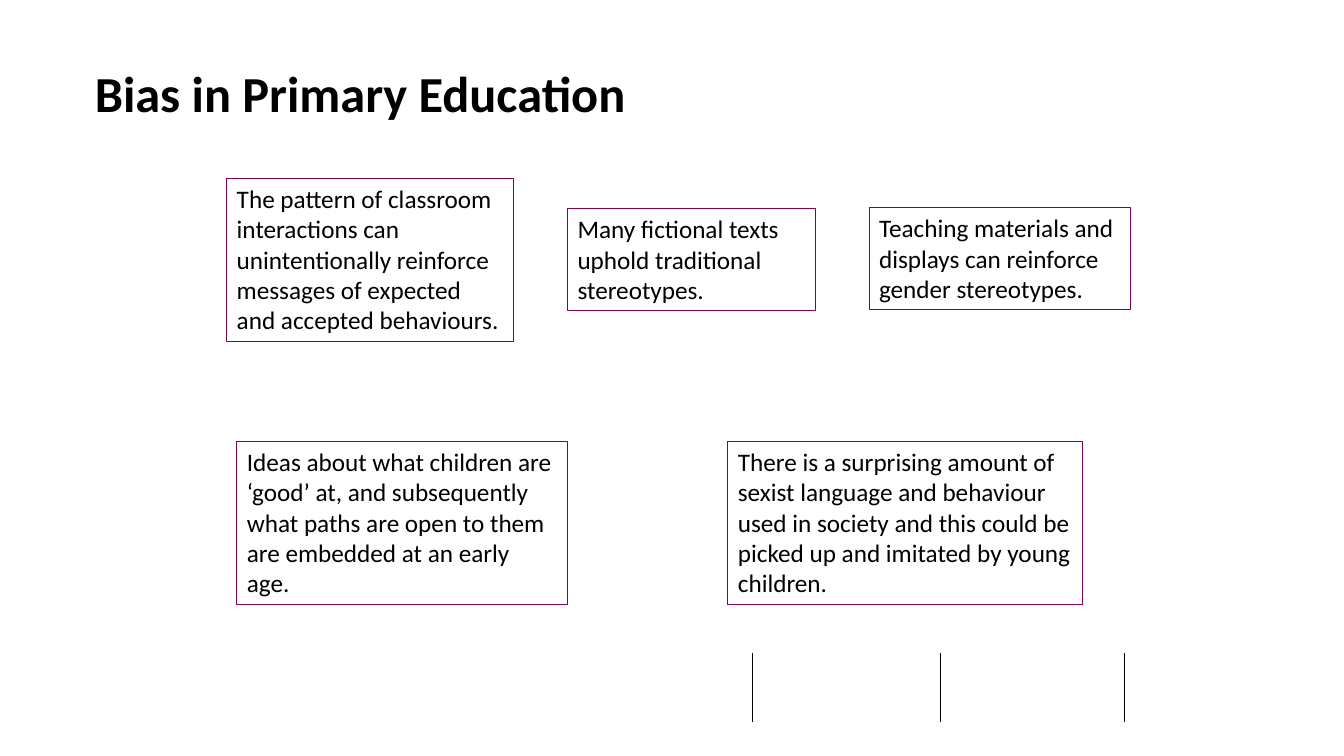
from pptx import Presentation
from pptx.dml.color import RGBColor
from pptx.enum.shapes import MSO_CONNECTOR, MSO_SHAPE
from pptx.enum.text import MSO_ANCHOR, MSO_AUTO_SIZE, PP_ALIGN
from pptx.oxml.ns import qn
from pptx.util import Inches, Pt
from lxml.etree import SubElement

FONT = "Calibri"
BLACK = "000000"
PLUM = "860052"

# Row tops and row heights, in inches
UPPER_ROW, LOWER_ROW = 2.07, 4.38
SHORT, TALL = 1.01, 1.62

# Left, top, width, height and wording of each statement
STATEMENTS = [
    (2.25, 1.77, 2.84, TALL,
     "The pattern of classroom interactions can unintentionally reinforce "
     "messages of expected and accepted behaviours."),
    (5.63, UPPER_ROW, 2.46, SHORT,
     "Many fictional texts uphold traditional stereotypes."),
    (8.62, UPPER_ROW - 0.01, 2.59, SHORT,
     "Teaching materials and displays can reinforce gender stereotypes."),
    (2.35, LOWER_ROW, 3.28, TALL,
     "Ideas about what children are ‘good’ at, and subsequently what paths "
     "are open to them are embedded at an early age."),
    (7.22, LOWER_ROW, 3.52, TALL,
     "There is a surprising amount of sexist language and behaviour used in "
     "society and this could be picked up and imitated by young children."),
]
DIVIDERS = (7.46, 9.33, 11.15)
DIVIDER_TOP, DIVIDER_BOTTOM = 6.48, 7.16


def color(value):
    return RGBColor.from_string(value)


def style(para, size, bold=False):
    para.alignment = PP_ALIGN.LEFT
    para.font.name = FONT
    para.font.size = Pt(size)
    para.font.bold = bold
    para.font.color.rgb = color(BLACK)


def add_title(page, text):
    title = page.shapes.title
    title.left, title.top = Inches(0.84), Inches(0.33)
    title.width, title.height = Inches(7.41), Inches(1.25)
    frame = title.text_frame
    frame.text = text
    frame.word_wrap = True
    frame.auto_size = MSO_AUTO_SIZE.NONE
    frame.vertical_anchor = MSO_ANCHOR.MIDDLE
    para = frame.paragraphs[0]
    para.line_spacing = 0.9
    style(para, 36, bold=True)


def add_statement(page, left, top, width, height, text):
    box = page.shapes.add_shape(
        MSO_SHAPE.RECTANGLE, Inches(left), Inches(top), Inches(width), Inches(height))
    box.shadow.inherit = False
    box.fill.background()
    box.line.color.rgb = color(PLUM)
    box.line.width = Pt(0.75)
    frame = box.text_frame
    frame.text = text
    frame.word_wrap = True
    frame.auto_size = MSO_AUTO_SIZE.SHAPE_TO_FIT_TEXT
    frame.vertical_anchor = MSO_ANCHOR.TOP
    style(frame.paragraphs[0], 18)


def add_divider(page, x):
    line = page.shapes.add_connector(
        MSO_CONNECTOR.STRAIGHT, Inches(x), Inches(DIVIDER_TOP),
        Inches(x), Inches(DIVIDER_BOTTOM))
    line.line.color.rgb = color(BLACK)
    line.line.width = Pt(0.5)
    SubElement(line._element.spPr, qn("a:effectLst"))


def main():
    deck = Presentation()
    deck.slide_width, deck.slide_height = Inches(13.33), Inches(7.5)
    page = deck.slides.add_slide(deck.slide_layouts[5])  # Title Only

    # Footer dividers
    for x in DIVIDERS:
        add_divider(page, x)

    # Title and statements
    add_title(page, "Bias in Primary Education")
    for statement in STATEMENTS:
        add_statement(page, *statement)

    deck.save("out.pptx")


if __name__ == "__main__":
    main()
